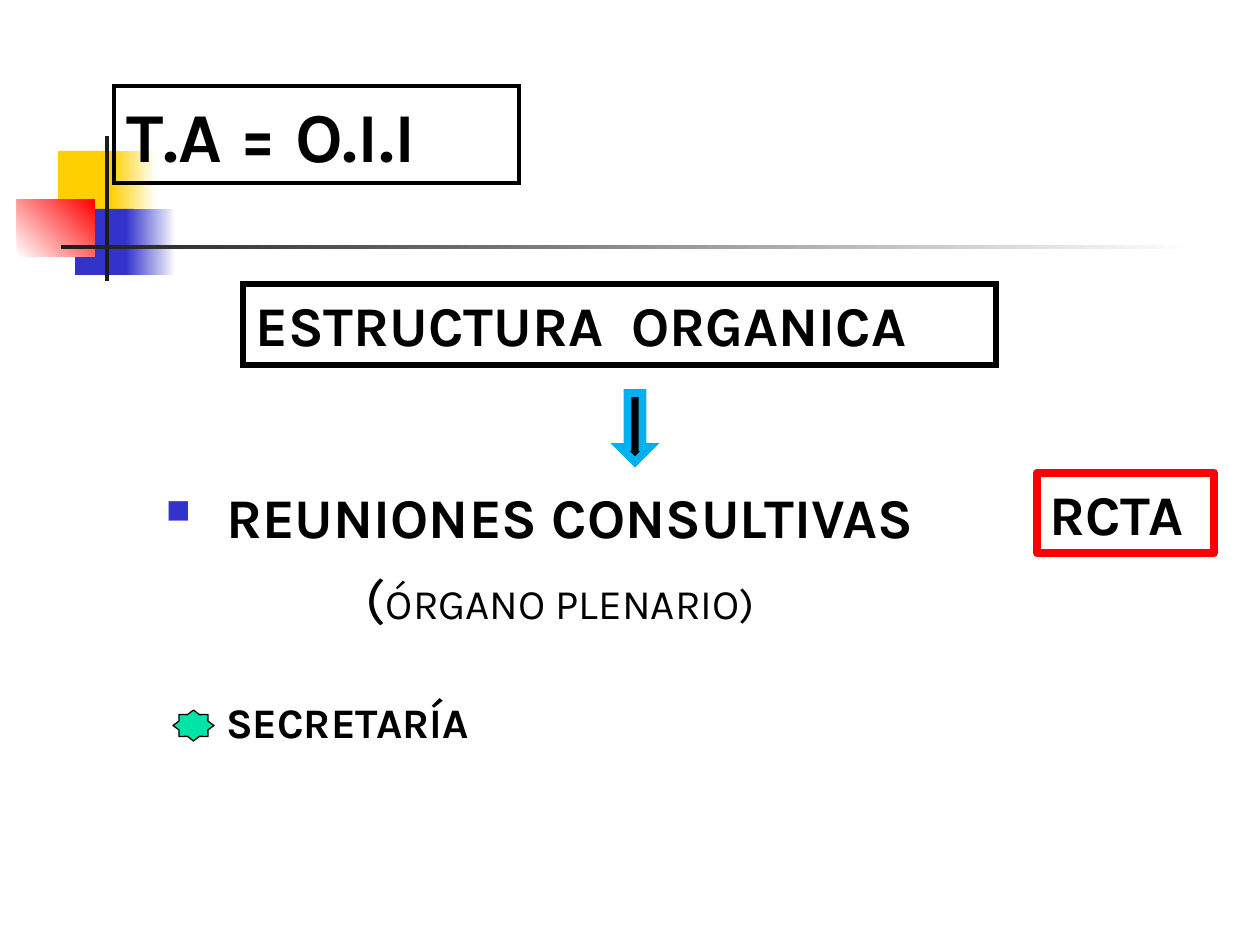
"""Builds the slide on the organic structure of the T.A."""
from lxml import etree
from pptx import Presentation
from pptx.dml.color import RGBColor
from pptx.enum.shapes import MSO_SHAPE
from pptx.enum.text import MSO_ANCHOR, MSO_AUTO_SIZE, PP_ALIGN
from pptx.oxml.ns import qn
from pptx.util import Emu, Pt

RECTANGLE, STAR, DOWN_ARROW = MSO_SHAPE.RECTANGLE, MSO_SHAPE.STAR_8_POINT, MSO_SHAPE.DOWN_ARROW
TOP, LEFT, GROW = MSO_ANCHOR.TOP, PP_ALIGN.LEFT, MSO_AUTO_SIZE.SHAPE_TO_FIT_TEXT
BLACK = RGBColor(0x00, 0x00, 0x00)
WHITE = RGBColor(0xFF, 0xFF, 0xFF)
YELLOW = RGBColor(0xFF, 0xCF, 0x01)
BLUE = RGBColor(0x33, 0x33, 0xCC)
RED = RGBColor(0xFF, 0x00, 0x00)
CHARCOAL = RGBColor(0x1C, 0x1C, 0x1C)
GREEN = RGBColor(0x00, 0xE4, 0xA8)
SKY = RGBColor(0x00, 0xB0, 0xF0)
FONT = "Karla"
EMU_PER_PX = 914400 / 126

# (left, top, width, height), colours, gradient angle
ORNAMENTS = [
    ((58, 151, 60, 66), (YELLOW,), 0),
    ((111, 151, 45, 66), (YELLOW, WHITE), 0),
    ((75, 209, 58, 66), (BLUE,), 0),
    ((126, 209, 50, 66), (BLUE, WHITE), 0),
    ((17, 199, 78, 58), (WHITE, RED), 45),
    ((105, 136, 4, 145), (CHARCOAL,), 0),
    ((61, 245, 1134, 4), (CHARCOAL, WHITE), 0),
]
# text, (left, top, width, height), text size, line colour, line width, mitred
FRAMES = [
    ("T.A = O.I.I", (114, 86, 405, 97), 40, BLACK, 2.25, True),
    ("ESTRUCTURA  ORGANICA", (243, 284, 753, 81), 32, BLACK, 3, True),
    ("RCTA", (1037, 473, 177, 80), 32, RED, 4.5, False),
]
BODY_AREA = (166, 482, 860, 270)
# runs of (text, size, bold), indent in px, space before in points, bullet
BODY = [
    ([("REUNIONES CONSULTIVAS", 32, True)], 60, 0, "■"),
    ([("(", 32, False), ("ÓRGANO PLENARIO)", 24, False)], 200, 8, None),
    ([("SECRETARÍA", 24, True)], 60, 38, None),
]


def px(length):
    return Emu(round(length * EMU_PER_PX))


def add_figure(slide, kind, area, colours=(), angle=0):
    figure = slide.shapes.add_shape(kind, *map(px, area))
    figure.shadow.inherit = False
    figure.line.fill.background()
    if not colours:
        figure.fill.background()
    elif len(colours) == 1:
        figure.fill.solid()
        figure.fill.fore_color.rgb = colours[0]
    else:
        figure.fill.gradient()
        figure.fill.gradient_angle = angle
        for position, (stop, colour) in enumerate(zip(figure.fill.gradient_stops, colours)):
            stop.position = position
            stop.color.rgb = colour
    return figure


def outline(figure, colour, width, mitred=False):
    figure.line.color.rgb = colour
    figure.line.width = Pt(width)
    if mitred:
        line = figure.line._get_or_add_ln()
        etree.SubElement(line, qn("a:miter"), lim="800000")


def add_run(para, text, size, bold):
    run = para.add_run()
    run.text = text
    run.font.name = FONT
    run.font.size = Pt(size)
    run.font.bold = bold
    run.font.color.rgb = BLACK


def add_bullet(properties, symbol):
    colour = etree.SubElement(properties, qn("a:buClr"))
    etree.SubElement(colour, qn("a:srgbClr"), val=str(BLUE))
    etree.SubElement(properties, qn("a:buSzPct"), val="60000")
    etree.SubElement(properties, qn("a:buChar"), char=symbol)


def add_body(slide):
    frame = slide.shapes.add_textbox(*map(px, BODY_AREA)).text_frame
    frame.word_wrap = True
    frame.margin_left = frame.margin_top = frame.margin_right = frame.margin_bottom = 0
    for index, (runs, indent, space, bullet) in enumerate(BODY):
        para = frame.add_paragraph() if index else frame.paragraphs[0]
        para.space_before = Pt(space)
        properties = para._p.get_or_add_pPr()
        properties.set("marL", str(px(indent)))
        if bullet:
            properties.set("indent", str(-px(indent)))
            add_bullet(properties, bullet)
        for run in runs:
            add_run(para, *run)


def main():
    deck = Presentation()
    deck.slide_width, deck.slide_height = px(1260), px(945)
    slide = deck.slides.add_slide(deck.slide_layouts[6])
    for area, colours, angle in ORNAMENTS:
        add_figure(slide, RECTANGLE, area, colours, angle)
    star = add_figure(slide, STAR, (173, 710, 41, 31), (GREEN,))
    star.adjustments[0] = 0.38
    outline(star, BLACK, 0.75)
    add_body(slide)
    for text, area, size, colour, width, mitred in FRAMES:
        box = add_figure(slide, RECTANGLE, area)
        outline(box, colour, width, mitred)
        frame = box.text_frame
        frame.word_wrap = True
        frame.auto_size = GROW
        frame.vertical_anchor = TOP
        frame.paragraphs[0].alignment = LEFT
        add_run(frame.paragraphs[0], text, size, True)
    arrow = add_figure(slide, DOWN_ARROW, (620, 393, 30, 69), (BLACK,))
    outline(arrow, SKY, 4.5, True)
    deck.save("out.pptx")


if __name__ == "__main__":
    main()
